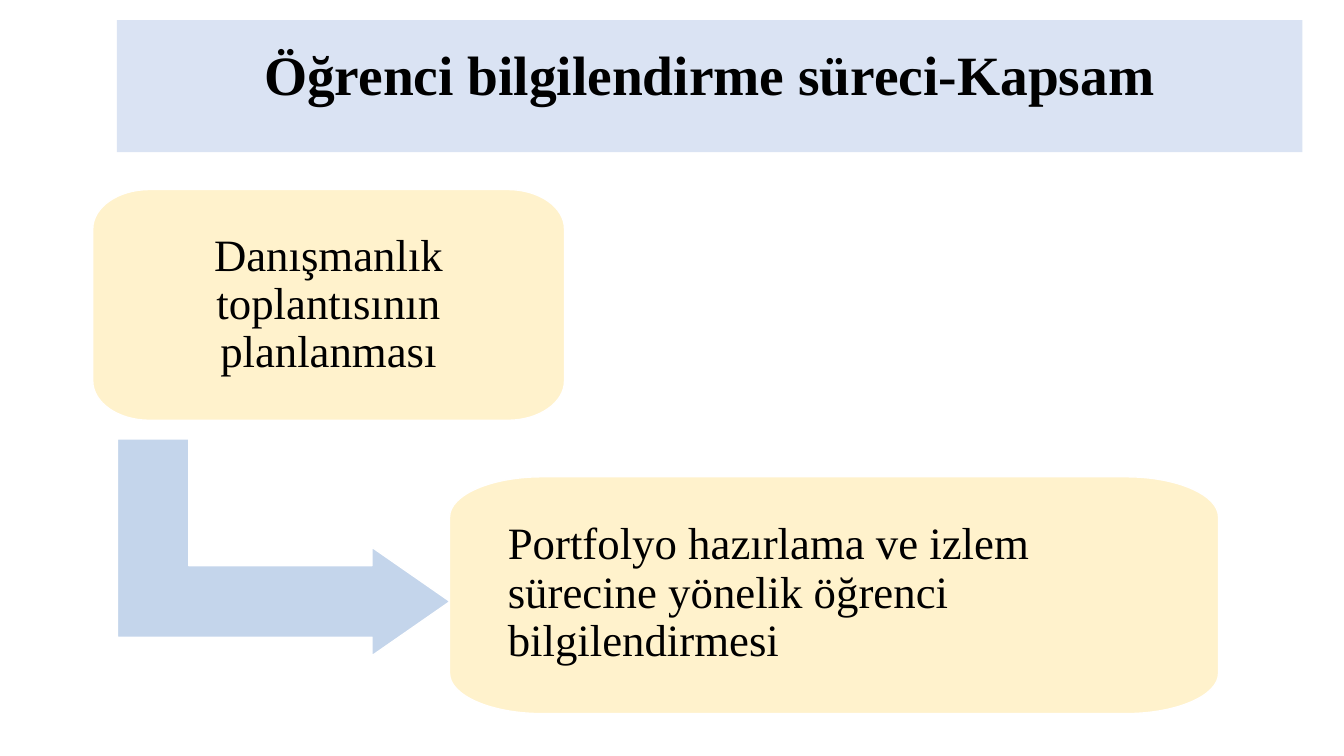
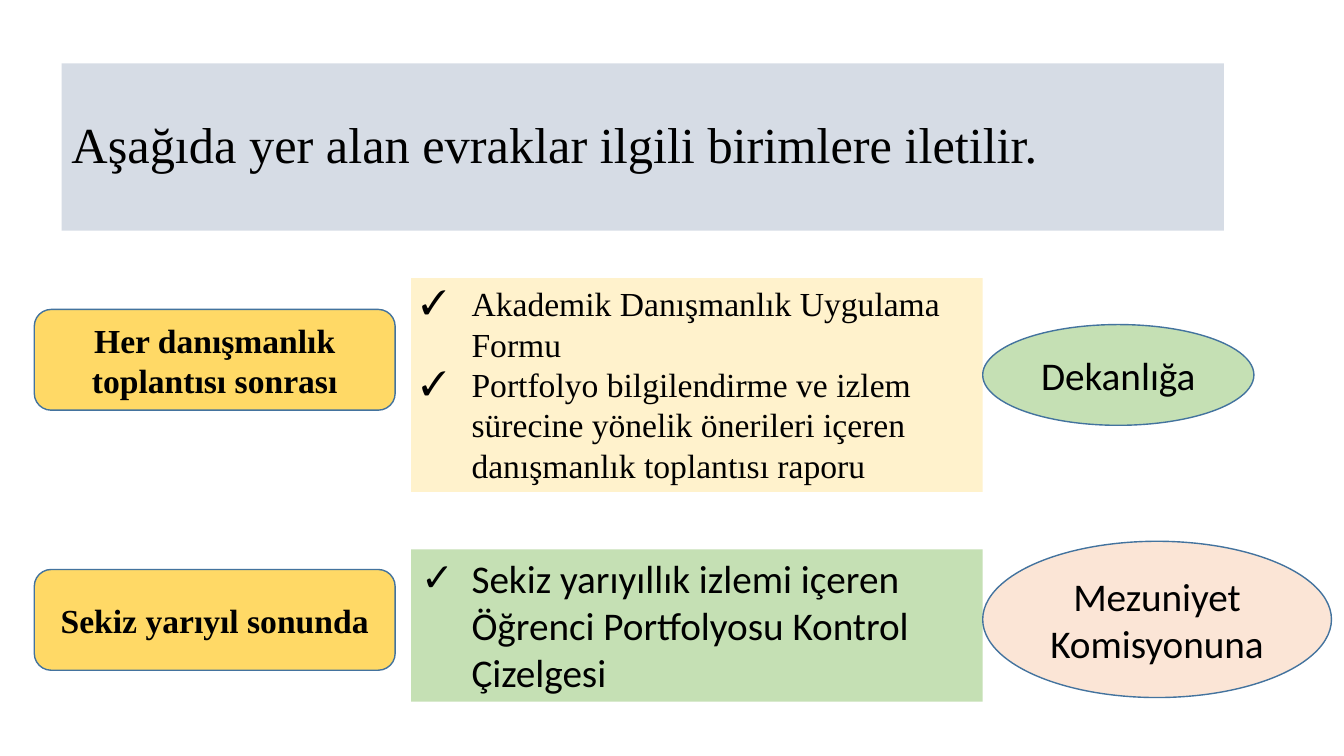
from dataclasses import dataclass
from typing import NamedTuple, Optional

from lxml import etree
from pptx import Presentation
from pptx.dml.color import RGBColor
from pptx.enum.shapes import MSO_SHAPE
from pptx.enum.text import MSO_ANCHOR, PP_ALIGN
from pptx.oxml.ns import qn
from pptx.util import Emu, Inches, Pt

RECT, ROUND = MSO_SHAPE.RECTANGLE, MSO_SHAPE.ROUNDED_RECTANGLE
OVAL, BENT = MSO_SHAPE.OVAL, MSO_SHAPE.BENT_UP_ARROW
LEFT, CENTER = PP_ALIGN.LEFT, PP_ALIGN.CENTER
TOP, MIDDLE = MSO_ANCHOR.TOP, MSO_ANCHOR.MIDDLE
WIDE, HIGH = Inches(13.333), Inches(7.5)


@dataclass(frozen=True)
class Theme:
    serif: str = "Times New Roman"
    sans: str = "Calibri"
    ink: str = "000000"
    white: str = "FFFFFF"
    edge: str = "43739E"
    blue: str = "DAE3F3"
    slate: str = "D6DCE5"
    arrow: str = "C4D5EB"
    cream: str = "FFF2CC"
    gold: str = "FFD966"
    green: str = "C5E0B4"
    peach: str = "FBE5D6"
    head: float = 39.6
    lead: float = 36
    step: float = 32
    large: float = 28
    body: float = 24


THEME = Theme()


class Box(NamedTuple):
    """Left, top, width and height in percent of the slide's size."""
    x: float
    y: float
    w: float
    h: float

    def emu(self) -> tuple:
        return (Emu(round(WIDE * self.x / 100)), Emu(round(HIGH * self.y / 100)),
                Emu(round(WIDE * self.w / 100)), Emu(round(HIGH * self.h / 100)))


@dataclass(frozen=True)
class Style:
    size: float
    font: str = THEME.serif
    bold: bool = False
    align: PP_ALIGN = CENTER
    anchor: MSO_ANCHOR = MIDDLE
    lead: float = 1.0
    check: bool = False
    pad: float = 0.05
    foot: float = 0.05


class Row(NamedTuple):
    stage: str
    stage_y: float
    forms: tuple
    form_y: float
    form_h: float
    form_fill: str
    form_size: float
    form_font: str
    unit: str
    unit_box: Box
    unit_fill: str


HEAD = Style(THEME.head, bold=True, lead=0.9, foot=0.23)
LEAD = Style(THEME.lead, align=LEFT, lead=0.9)
STEP = Style(THEME.step, lead=0.9, pad=0.16, foot=0.16)
NOTE = Style(THEME.step, align=LEFT, anchor=TOP, lead=0.9)
STAGE = Style(THEME.body, bold=True)
UNIT = Style(THEME.large, THEME.sans)

STAGE_X, STAGE_W, STAGE_H = 2.55, 26.85, 13.33
FORM_X, FORM_W = 30.6, 42.52
UNIT_X = FORM_X + FORM_W

ROWS = (
    Row("Her danışmanlık toplantısı sonrası", 40.93,
        ("Akademik Danışmanlık Uygulama Formu",
         "Portfolyo bilgilendirme ve izlem sürecine yönelik önerileri içeren "
         "danışmanlık toplantısı raporu"),
        36.8, 28.27, THEME.cream, THEME.body, THEME.serif,
        "Dekanlığa", Box(UNIT_X, 42.93, 20.18, 13.33), THEME.green),
    Row("Sekiz yarıyıl sonunda", 75.33,
        ("Sekiz yarıyıllık izlemi içeren Öğrenci Portfolyosu Kontrol Çizelgesi",),
        72.67, 20.13, THEME.green, THEME.large, THEME.sans,
        "Mezuniyet Komisyonuna", Box(UNIT_X, 71.6, 25.95, 20.67), THEME.peach),
)


def paint(shape, fill: str, edge: Optional[str] = None) -> None:
    shape.shadow.inherit = False
    shape.fill.solid()
    shape.fill.fore_color.rgb = RGBColor.from_string(fill)
    if edge:
        shape.line.color.rgb = RGBColor.from_string(edge)
        shape.line.width = Pt(1)
    else:
        shape.line.fill.background()


def tick(para, font: str) -> None:
    """Give the paragraph a hanging check mark."""
    props = para._p.get_or_add_pPr()
    props.set("marL", str(Inches(0.5)))
    props.set("indent", str(-Inches(0.5)))
    etree.SubElement(props, qn("a:buFont")).set("typeface", font)
    etree.SubElement(props, qn("a:buChar")).set("char", "✓")


def write(shape, lines: tuple, style: Style) -> None:
    frame = shape.text_frame
    frame.word_wrap = True
    frame.vertical_anchor = style.anchor
    frame.margin_left = frame.margin_right = Inches(max(style.pad, 0.1))
    frame.margin_top, frame.margin_bottom = Inches(style.pad), Inches(style.foot)
    for i, line in enumerate(lines):
        para = frame.add_paragraph() if i else frame.paragraphs[0]
        para.alignment = style.align
        para.line_spacing = style.lead
        if style.check:
            tick(para, style.font)
        run = para.add_run()
        run.text = line
        run.font.name = style.font
        run.font.size = Pt(style.size)
        run.font.bold = style.bold
        run.font.color.rgb = RGBColor.from_string(THEME.ink)


def block(slide, kind: MSO_SHAPE, box: Box, fill: str, lines: tuple,
          style: Style, edge: Optional[str] = None) -> None:
    shape = slide.shapes.add_shape(kind, *box.emu())
    paint(shape, fill, edge)
    write(shape, lines, style)


def toward(start: tuple, goal: tuple) -> tuple:
    """Return the control point of a quarter ellipse."""
    return tuple(round(a + 0.55 * (b - a)) for a, b in zip(start, goal))


def curve(shape) -> None:
    """Turn the three lines after each corner's start into one curve."""
    route = next(shape._element.iter(qn("a:path")))
    nodes = list(route)
    for i in range(0, 16, 4):
        bend = etree.Element(qn("a:cubicBezTo"))
        nodes[i].addnext(bend)
        for node in nodes[i + 1:i + 4]:
            bend.append(node[0])
            route.remove(node)


def panel(slide, box: Box):
    """Draw a box whose corners are quarter ellipses."""
    x, y, w, h = box.emu()
    rx, ry = round(0.12 * w), round(0.17 * h)
    right, foot = x + w, y + h
    turns = (((x, y + ry), (x, y), (x + rx, y)),
             ((right - rx, y), (right, y), (right, y + ry)),
             ((right, foot - ry), (right, foot), (right - rx, foot)),
             ((x + rx, foot), (x, foot), (x, foot - ry)))
    dots = []
    for start, tip, end in turns:
        dots += [start, toward(start, tip), toward(end, tip), end]
    pen = slide.shapes.build_freeform(*dots[0])
    pen.add_line_segments(dots[1:], close=True)
    shape = pen.convert_to_shape()
    curve(shape)
    paint(shape, THEME.cream, THEME.white)
    return shape


def scope(slide) -> None:
    block(slide, RECT, Box(8.7, 2.67, 88.2, 17.47), THEME.blue,
          ("Öğrenci bilgilendirme süreci-Kapsam",), HEAD)
    arrow = slide.shapes.add_shape(BENT, *Box(13.05, 50.4, 16.12, 44).emu())
    arrow.rotation = 90
    for i, share in enumerate((0.33, 0.25, 0.36)):
        arrow.adjustments[i] = share
    paint(arrow, THEME.arrow, THEME.white)
    plan = panel(slide, Box(6.9, 25.07, 35.1, 30.53))
    write(plan, ("Danışmanlık toplantısının planlanması",), STEP)
    panel(slide, Box(33.45, 63.07, 57.22, 31.33))
    note = slide.shapes.add_textbox(*Box(37.05, 68.27, 50.02, 20.8).emu())
    write(note, ("Portfolyo hazırlama ve izlem sürecine yönelik öğrenci "
                 "bilgilendirmesi",), NOTE)


def papers(slide) -> None:
    block(slide, RECT, Box(4.58, 8.4, 86.48, 22.13), THEME.slate,
          ("Aşağıda yer alan evraklar ilgili birimlere iletilir.",), LEAD)
    for row in ROWS:
        form = Style(row.form_size, row.form_font, align=LEFT, anchor=TOP, check=True)
        block(slide, RECT, Box(FORM_X, row.form_y, FORM_W, row.form_h),
              row.form_fill, row.forms, form)
        block(slide, OVAL, row.unit_box, row.unit_fill, (row.unit,), UNIT, THEME.edge)
        block(slide, ROUND, Box(STAGE_X, row.stage_y, STAGE_W, STAGE_H),
              THEME.gold, (row.stage,), STAGE, THEME.edge)


def main() -> None:
    deck = Presentation()
    deck.slide_width, deck.slide_height = WIDE, HIGH
    blank = deck.slide_layouts[6]
    for draw in (scope, papers):
        draw(deck.slides.add_slide(blank))
    deck.save("out.pptx")


if __name__ == "__main__":
    main()
